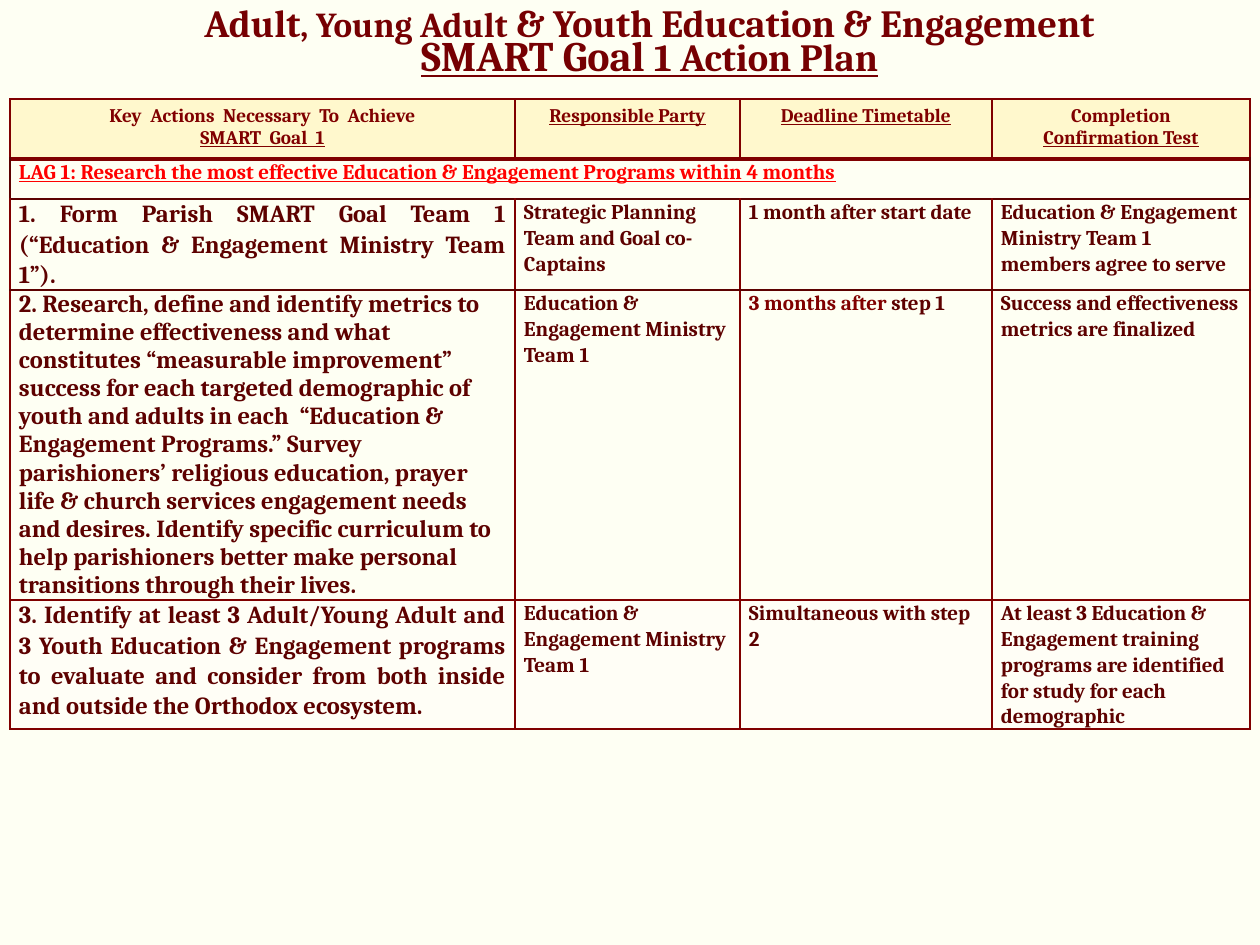
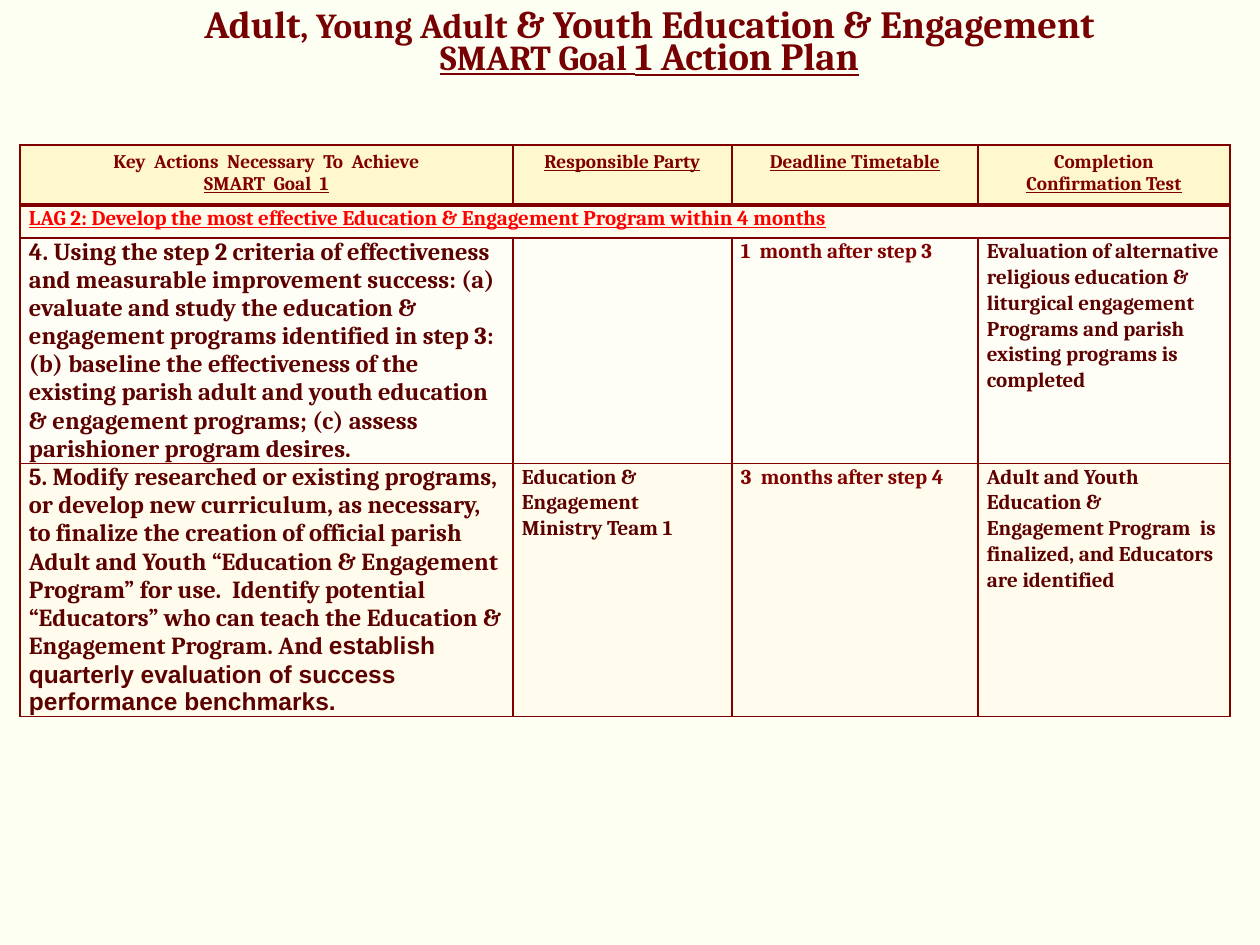
from dataclasses import dataclass

import pptx
import pptx.dml.color
import pptx.enum.text
import pptx.oxml.ns
import pptx.util
from lxml import etree

EMU_PER_PX = 914400 / 126
ALIGN = pptx.enum.text.PP_ALIGN
ANCHOR = pptx.enum.text.MSO_ANCHOR


@dataclass(frozen=True)
class Theme:
    page: str = "FEFFF3"
    title: str = "760002"
    maroon: str = "800000"
    dark: str = "5D0100"
    red: str = "FF0000"
    header: str = "FFF8CD"
    cream: str = "FFFCED"
    ivory: str = "FFFEF6"
    font: str = "Cambria"
    plain_font: str = "Arial"
    title_size: int = 22
    small_title_size: int = 20
    large_title_size: int = 24
    header_size: int = 11
    action_size: int = 14
    detail_size: int = 12
    thin: int = 1
    thick: int = 3


THEME = Theme()
PAGE_SIZE = (1260, 945)
TITLE_BOX = (30, -34, 1239, 158)
HEADER_MARGINS = (13, 6, 13, 6)
BODY_MARGINS = (9, 0, 9, 0)
UNDERLINE = {"underline": True}
MAROON = {"color": THEME.maroon}
TEAM = "Education & Engagement Ministry Team 1"

HEADERS = [
    [["Key  Actions  Necessary  To  Achieve"], [("SMART  Goal  1", UNDERLINE)]],
    [[("Responsible Party", UNDERLINE)]],
    [[("Deadline Timetable", UNDERLINE)]],
    [["Completion"], [("Confirmation Test", UNDERLINE)]],
]

PLANS = [
    {
        "goal_size": THEME.large_title_size,
        "corner": (10, 99),
        "columns": [505, 225, 252, 258],
        "rows": [60, 40, 91, 310, 129],
        "lag": "LAG 1: Research the most effective Education & Engagement Programs within 4 months",
        "lag_fill": None,
        "lag_edge": THEME.dark,
        "steps": [
            {
                "fill": None,
                "edge": THEME.dark,
                "justified": True,
                "cells": [
                    "1. Form Parish SMART Goal Team 1 (“Education & Engagement Ministry Team 1”).",
                    "Strategic Planning Team and Goal co-Captains",
                    "1 month after start date",
                    "Education & Engagement Ministry Team 1 members agree to serve",
                ],
            },
            {
                "fill": None,
                "edge": THEME.maroon,
                "justified": False,
                "cells": [
                    "2. Research, define and identify metrics to determine effectiveness and what "
                    "constitutes “measurable improvement” success for each targeted demographic of "
                    "youth and adults in each  “Education & Engagement Programs.” Survey "
                    "parishioners’ religious education, prayer life & church services engagement "
                    "needs and desires. Identify specific curriculum to help parishioners better "
                    "make personal transitions through their lives.",
                    TEAM,
                    [[("3 months after ", MAROON), "step 1"]],
                    "Success and effectiveness metrics are finalized",
                ],
            },
            {
                "fill": THEME.ivory,
                "edge": THEME.maroon,
                "justified": True,
                "cells": [
                    "3. Identify at least 3 Adult/Young Adult and 3 Youth Education & Engagement "
                    "programs to evaluate and consider from both inside and outside the Orthodox "
                    "ecosystem.",
                    TEAM,
                    "Simultaneous with step 2",
                    "At least 3 Education & Engagement training programs are identified for study "
                    "for each demographic",
                ],
            },
        ],
    },
    {
        "goal_size": THEME.small_title_size,
        "corner": (20, 145),
        "columns": [493, 219, 246, 252],
        "rows": [60, 33, 225, 253],
        "lag": "LAG 2: Develop the most effective Education & Engagement Program within 4 months",
        "lag_fill": THEME.cream,
        "lag_edge": THEME.maroon,
        "steps": [
            {
                "fill": THEME.ivory,
                "edge": THEME.maroon,
                "justified": False,
                "cells": [
                    "4. Using the step 2 criteria of effectiveness and measurable improvement "
                    "success: (a) evaluate and study the education & engagement programs "
                    "identified in step 3: (b) baseline the effectiveness of the existing parish "
                    "adult and youth education & engagement programs; (c) assess parishioner "
                    "program desires.",
                    None,
                    [[("1  month after step 3", MAROON)]],
                    "Evaluation of alternative religious education & liturgical engagement "
                    "Programs and parish existing programs is completed",
                ],
            },
            {
                "fill": THEME.cream,
                "edge": THEME.maroon,
                "justified": False,
                "cells": [
                    [[
                        "5. Modify researched or existing programs, or develop new curriculum, as "
                        "necessary, to finalize the creation of official parish Adult and Youth "
                        "“Education & Engagement Program” for use.  Identify potential “Educators” "
                        "who can teach the Education & Engagement Program. And ",
                        ("establish quarterly evaluation of success performance benchmarks.",
                         {"font": THEME.plain_font}),
                    ]],
                    TEAM,
                    [[("3  months after step 4", MAROON)]],
                    "Adult and Youth Education & Engagement Program  is finalized, and Educators "
                    "are identified",
                ],
            },
        ],
    },
]


def px(length):
    return pptx.util.Emu(round(length * EMU_PER_PX))


def rgb(color):
    return pptx.dml.color.RGBColor.from_string(color)


def write(frame, text, *, align=ALIGN.LEFT, spacing=1.0, **base):
    paragraphs = [[text]] if isinstance(text, str) else text
    for index, spans in enumerate(paragraphs):
        para = frame.add_paragraph() if index else frame.paragraphs[0]
        para.alignment = align
        para.line_spacing = spacing
        for item in spans:
            if item == "\n":
                para.add_line_break()
                continue
            words, changes = (item, {}) if isinstance(item, str) else item
            look = {"font": THEME.font, "underline": False, **base, **changes}
            span = para.add_run()
            span.text = words
            span.font.name = look["font"]
            span.font.size = pptx.util.Pt(look["size"])
            span.font.bold = True
            span.font.underline = look["underline"]
            span.font.color.rgb = rgb(look["color"])


def set_edges(cell, edges):
    properties = cell._tc.get_or_add_tcPr()
    for side in "LRTB":
        color, width = edges[side]
        line = etree.SubElement(properties, pptx.oxml.ns.qn(f"a:ln{side}"),
                                w=str(pptx.util.Pt(width)))
        fill = etree.SubElement(line, pptx.oxml.ns.qn("a:solidFill"))
        etree.SubElement(fill, pptx.oxml.ns.qn("a:srgbClr"), val=color)


def style_row(row, fill, margins, side, top, bottom):
    for cell in row.cells:
        set_edges(cell, {"L": side, "R": side, "T": top, "B": bottom})
        if fill:
            cell.fill.solid()
            cell.fill.fore_color.rgb = rgb(fill)
        else:
            cell.fill.background()
        (cell.margin_left, cell.margin_top,
         cell.margin_right, cell.margin_bottom) = map(px, margins)
        cell.vertical_anchor = ANCHOR.TOP


def add_title(page, goal_size):
    box = page.shapes.title
    box.left, box.top, box.width, box.height = map(px, TITLE_BOX)
    frame = box.text_frame
    frame.word_wrap = True
    frame.auto_size = pptx.enum.text.MSO_AUTO_SIZE.NONE
    frame.vertical_anchor = ANCHOR.MIDDLE
    heading = [
        "Adult",
        (", Young Adult", {"size": THEME.small_title_size}),
        " & Youth Education & Engagement",
        "\n",
        ("SMART Goal ", {"size": goal_size, "underline": True}),
        ("1 Action Plan", UNDERLINE),
    ]
    write(frame, [heading], align=ALIGN.CENTER, spacing=0.7,
          size=THEME.title_size, color=THEME.title)


def add_plan(page, plan):
    widths, heights = plan["columns"], plan["rows"]
    table = page.shapes.add_table(
        len(heights), len(widths), *map(px, plan["corner"]),
        px(sum(widths)), px(sum(heights))).table
    table.first_row = table.horz_banding = False
    for column, width in zip(table.columns, widths):
        column.width = px(width)
    for row, height in zip(table.rows, heights):
        row.height = px(height)

    maroon = (THEME.maroon, THEME.thin)
    header_rule = (THEME.maroon, THEME.thick)
    lag_edge = (plan["lag_edge"], THEME.thin)
    style_row(table.rows[0], THEME.header, HEADER_MARGINS, maroon, maroon, header_rule)
    for cell, text in zip(table.rows[0].cells, HEADERS):
        write(cell.text_frame, text, align=ALIGN.CENTER,
              size=THEME.header_size, color=THEME.maroon)

    style_row(table.rows[1], plan["lag_fill"], BODY_MARGINS, lag_edge, header_rule, lag_edge)
    lag = table.cell(1, 0)
    lag.merge(table.cell(1, len(widths) - 1))
    write(lag.text_frame, plan["lag"], spacing=1.07, underline=True,
          size=THEME.detail_size, color=THEME.red)

    top = lag_edge
    for row, step in zip(list(table.rows)[2:], plan["steps"]):
        bottom = (step["edge"], THEME.thin)
        style_row(row, step["fill"], BODY_MARGINS, maroon, top, bottom)
        top = bottom
        for index, (cell, text) in enumerate(zip(row.cells, step["cells"])):
            if not text:
                continue
            is_action = index == 0
            justified = is_action and step["justified"]
            write(cell.text_frame, text, color=THEME.dark,
                  align=ALIGN.JUSTIFY if justified else ALIGN.LEFT,
                  spacing=1.0 if is_action and not justified else 1.07,
                  size=THEME.action_size if is_action else THEME.detail_size)


def main():
    deck = pptx.Presentation()
    deck.slide_width, deck.slide_height = map(px, PAGE_SIZE)
    background = deck.slide_master.background.fill
    background.solid()
    background.fore_color.rgb = rgb(THEME.page)
    for plan in PLANS:
        page = deck.slides.add_slide(deck.slide_layouts[5])
        add_plan(page, plan)
        add_title(page, plan["goal_size"])
    deck.save("out.pptx")


if __name__ == "__main__":
    main()
